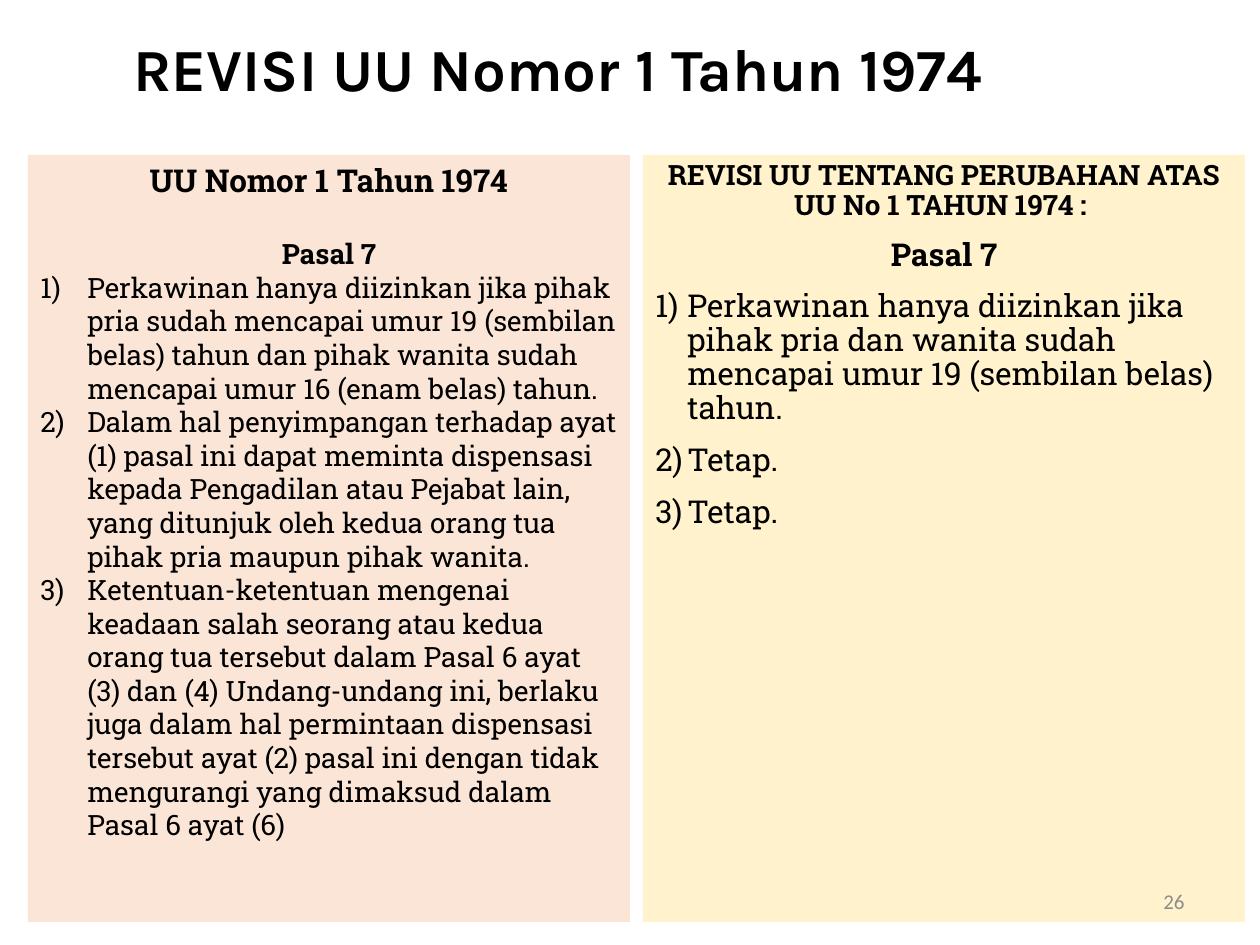
from dataclasses import dataclass

from lxml import etree
from pptx import Presentation
from pptx.dml.color import RGBColor
from pptx.enum.shapes import MSO_SHAPE
from pptx.enum.text import MSO_ANCHOR, MSO_AUTO_SIZE, PP_ALIGN
from pptx.oxml.ns import qn
from pptx.util import Emu, Pt

RECTANGLE = MSO_SHAPE.RECTANGLE
TOP, MIDDLE = MSO_ANCHOR.TOP, MSO_ANCHOR.MIDDLE
LEFT, CENTER, RIGHT = PP_ALIGN.LEFT, PP_ALIGN.CENTER, PP_ALIGN.RIGHT
NO_AUTOFIT = MSO_AUTO_SIZE.NONE
EMU_PER_PX = 914400 / 126


@dataclass(frozen=True)
class Theme:
    ink: str = "000000"
    muted: str = "8C8C8C"
    old_law: str = "FBE5D6"
    new_law: str = "FFF2CC"
    title_font: str = "Karla"
    body_font: str = "Roboto Slab"
    number_font: str = "Calibri"
    title_size: float = 34.1
    large: int = 18
    medium: int = 16
    small: int = 12


@dataclass(frozen=True)
class Line:
    text: str
    size: float
    heading: bool = False
    space_before: float = 0


@dataclass(frozen=True)
class Panel:
    left: int
    fill: str
    indent: int
    line_spacing: float
    lines: tuple[Line, ...]


THEME = Theme()
PANEL_TOP, PANEL_WIDTH, PANEL_HEIGHT = 155, 602, 767

OLD_LAW = Panel(28, THEME.old_law, 47, 1.0, (
    Line("UU Nomor 1 Tahun 1974", THEME.large, True),
    Line("Pasal 7", THEME.medium, True, 21.6),
    Line("Perkawinan hanya diizinkan jika pihak pria sudah mencapai umur 19 "
         "(sembilan belas) tahun dan pihak wanita sudah mencapai umur 16 "
         "(enam belas) tahun.", THEME.medium),
    Line("Dalam hal penyimpangan terhadap ayat (1) pasal ini dapat meminta "
         "dispensasi kepada Pengadilan atau Pejabat lain, yang ditunjuk oleh "
         "kedua orang tua pihak pria maupun pihak wanita.", THEME.medium),
    Line("Ketentuan-ketentuan mengenai keadaan salah seorang atau kedua orang "
         "tua tersebut dalam Pasal 6 ayat (3) dan (4) Undang-undang ini, "
         "berlaku juga dalam hal permintaan dispensasi tersebut ayat (2) pasal "
         "ini dengan tidak mengurangi yang dimaksud dalam Pasal 6 ayat (6)",
         THEME.medium),
))
NEW_LAW = Panel(643, THEME.new_law, 32, 0.9, (
    Line("REVISI UU TENTANG PERUBAHAN ATAS UU No 1 TAHUN 1974 : ",
         THEME.medium, True, 10),
    Line("Pasal 7", THEME.large, True, 10),
    Line("Perkawinan hanya diizinkan jika pihak pria dan wanita sudah mencapai "
         "umur 19 (sembilan belas) tahun.", THEME.large, space_before=10),
    Line("Tetap.", THEME.large, space_before=10),
    Line("Tetap.", THEME.large, space_before=10),
))


def px(length: int) -> Emu:
    return Emu(round(length * EMU_PER_PX))


def place(box, left: int, top: int, width: int, height: int) -> None:
    box.left, box.top = px(left), px(top)
    box.width, box.height = px(width), px(height)


def set_frame(frame, anchor) -> None:
    frame.word_wrap = True
    frame.auto_size = NO_AUTOFIT
    frame.vertical_anchor = anchor


def style(para, font: str, size: float, color: str, bold: bool, align) -> None:
    para.alignment = align
    for span in para.runs:
        span.font.name = font
        span.font.size = Pt(size)
        span.font.bold = bold
        span.font.color.rgb = RGBColor.from_string(color)


def number_item(para, indent: int) -> None:
    """Give a paragraph an automatic 1) 2) 3) number on a hanging indent."""
    properties = para._p.get_or_add_pPr()
    properties.set("marL", str(px(indent)))
    properties.set("indent", str(-px(indent)))
    etree.SubElement(properties, qn("a:buFont"), typeface="+mj-lt")
    etree.SubElement(properties, qn("a:buAutoNum"), type="arabicParenR")


def add_panel(page, panel: Panel) -> None:
    box = page.shapes.add_shape(RECTANGLE, 0, 0, 0, 0)
    place(box, panel.left, PANEL_TOP, PANEL_WIDTH, PANEL_HEIGHT)
    box.shadow.inherit = False
    box.fill.solid()
    box.fill.fore_color.rgb = RGBColor.from_string(panel.fill)
    box.line.fill.background()
    frame = box.text_frame
    set_frame(frame, TOP)
    frame.text = "\n".join(line.text for line in panel.lines)
    for para, line in zip(frame.paragraphs, panel.lines):
        style(para, THEME.body_font, line.size, THEME.ink, line.heading,
              CENTER if line.heading else LEFT)
        para.line_spacing = panel.line_spacing
        para.space_before = Pt(line.space_before)
        if not line.heading:
            number_item(para, panel.indent)


def set_title(page, text: str) -> None:
    title = page.shapes.title
    place(title, 121, 26, 1071, 100)
    set_frame(title.text_frame, MIDDLE)
    title.text_frame.text = text
    para = title.text_frame.paragraphs[0]
    style(para, THEME.title_font, THEME.title_size, THEME.ink, True, LEFT)
    para.line_spacing = 0.7


def add_page_number(page, text: str) -> None:
    box = page.shapes.add_textbox(0, 0, 0, 0)
    place(box, 903, 876, 294, 50)
    set_frame(box.text_frame, MIDDLE)
    box.text_frame.text = text
    style(box.text_frame.paragraphs[0], THEME.number_font, THEME.small,
          THEME.muted, False, RIGHT)


def main() -> None:
    deck = Presentation()
    deck.slide_width, deck.slide_height = px(1260), px(945)
    page = deck.slides.add_slide(deck.slide_layouts.get_by_name("Title Only"))

    # Heading
    set_title(page, "REVISI UU Nomor 1 Tahun 1974")

    # Revised and current law side by side
    for panel in (NEW_LAW, OLD_LAW):
        add_panel(page, panel)

    # Footer
    add_page_number(page, "26")
    deck.save("out.pptx")


if __name__ == "__main__":
    main()
